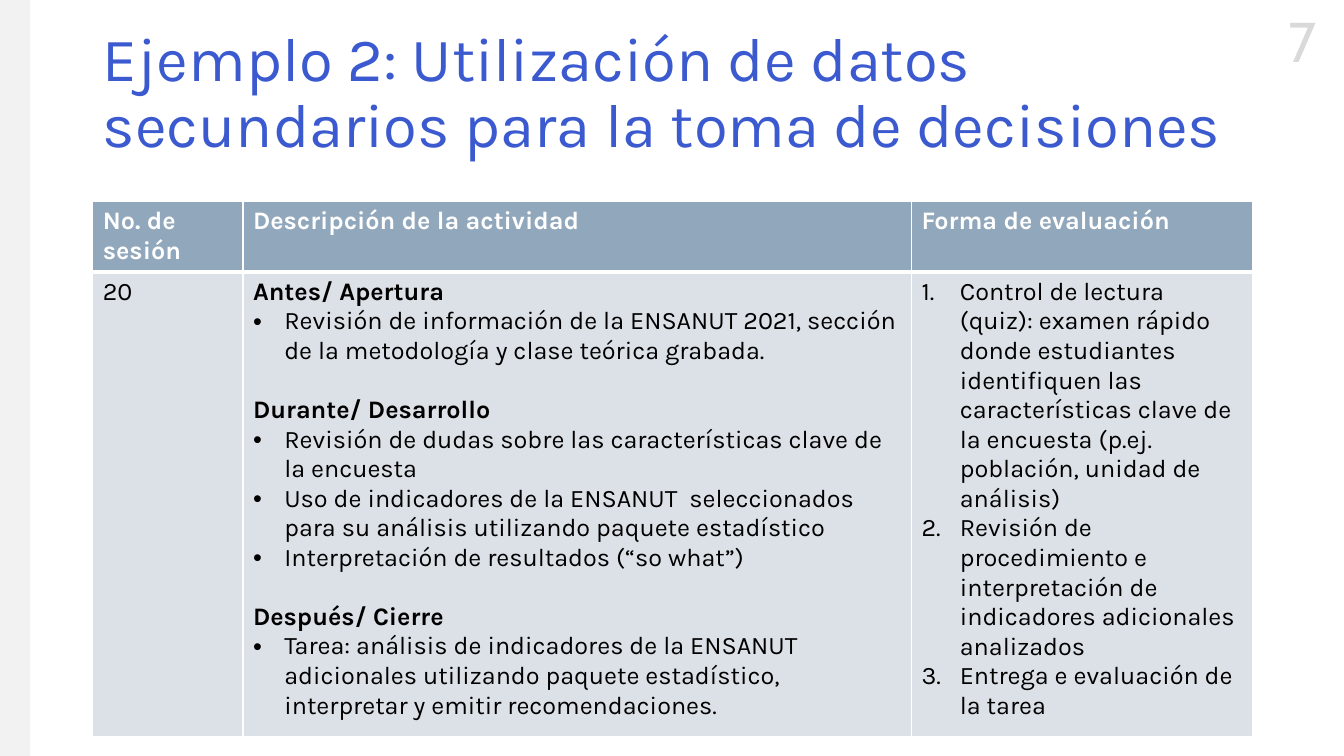
from lxml import etree
from pptx import Presentation
from pptx.dml.color import RGBColor
from pptx.enum import shapes, text
from pptx.oxml import ns
from pptx.util import Inches, Pt

BLUE = RGBColor(0x3C, 0x5A, 0xCF)
SLATE = RGBColor(0x91, 0xA7, 0xBC)
PALE = RGBColor(0xDC, 0xE1, 0xE7)
WHITE = RGBColor(0xFF, 0xFF, 0xFF)
BLACK = RGBColor(0, 0, 0)
STRIP_GRAY = RGBColor(0xF2, 0xF2, 0xF2)
NUMBER_GRAY = RGBColor(0xD9, 0xD9, 0xD9)

COLUMN_WIDTHS = (1.49, 6.63, 3.38)
ROW_HEIGHTS = (0.69, 4.61)
HEADINGS = ("No. de sesión", "Descripción de la actividad", "Forma de evaluación")
SESSION = "20"
STAGES = (
    ("Antes/ Apertura", (
        "Revisión de información de la ENSANUT 2021, sección de la metodología "
        "y clase teórica grabada.",
    )),
    ("Durante/ Desarrollo", (
        "Revisión de dudas sobre las características clave de la encuesta",
        "Uso de indicadores de la ENSANUT  seleccionados para su análisis "
        "utilizando paquete estadístico",
        "Interpretación de resultados (“so what”)",
    )),
    ("Después/ Cierre", (
        "Tarea: análisis de indicadores de la ENSANUT adicionales utilizando "
        "paquete estadístico, interpretar y emitir recomendaciones.",
    )),
)
EVALUATIONS = (
    "Control de lectura (quiz): examen rápido donde estudiantes identifiquen las "
    "características clave de la encuesta (p.ej. población, unidad de análisis)",
    "Revisión de procedimiento e interpretación de indicadores adicionales analizados",
    "Entrega e evaluación de la tarea",
)


def write(frame, words, size=18, font="Karla", color=BLACK, bold=False,
          before=0, align=None, spacing=None, marker=None, indent=0):
    """Add a paragraph, using the frame's first one while it is empty."""
    para = frame.paragraphs[0]
    if para.runs:
        para = frame.add_paragraph()
    if marker:
        mark_list_item(para, marker, indent)
    if before:
        para.space_before = Pt(before)
    if align is not None:
        para.alignment = align
    if spacing:
        para.line_spacing = spacing
    span = para.add_run()
    span.text = words
    span.font.size = Pt(size)
    span.font.name = font
    span.font.bold = bold
    span.font.color.rgb = color


def mark_list_item(para, marker, indent):
    """Give a hanging indent with a bullet character or, for "1.", a number."""
    properties = para._p.get_or_add_pPr()
    properties.set("marL", str(Inches(indent)))
    properties.set("indent", str(-Inches(indent)))
    if marker == "1.":
        etree.SubElement(properties, ns.qn("a:buAutoNum"), type="arabicPeriod")
    else:
        etree.SubElement(properties, ns.qn("a:buFont"), typeface="Arial")
        etree.SubElement(properties, ns.qn("a:buChar"), char=marker)


def style_cell(cell, color, top, bottom):
    """Set white borders, with top and bottom widths in points, and the fill."""
    properties = cell._tc.get_or_add_tcPr()
    for side, width in (("L", 1), ("R", 1), ("T", top), ("B", bottom)):
        line = etree.SubElement(properties, ns.qn(f"a:ln{side}"), w=str(Pt(width)))
        fill = etree.SubElement(line, ns.qn("a:solidFill"))
        etree.SubElement(fill, ns.qn("a:srgbClr"), val=str(WHITE))
    cell.fill.solid()
    cell.fill.fore_color.rgb = color


def add_strip(page, height):
    strip = page.shapes.add_shape(
        shapes.MSO_SHAPE.RECTANGLE, 0, 0, Inches(0.3), height)
    strip.shadow.inherit = False
    strip.fill.solid()
    strip.fill.fore_color.rgb = STRIP_GRAY
    strip.line.fill.background()


def add_page_number(page, number):
    box = page.shapes.add_textbox(
        Inches(12.54), Inches(0.02), Inches(0.75), Inches(0.77))
    box.text_frame.word_wrap = False
    write(box.text_frame, number, size=40, font="Cabin", color=NUMBER_GRAY,
          align=text.PP_ALIGN.CENTER)


def set_title(page, words):
    title = page.shapes.title
    title.left, title.top = Inches(0.92), Inches(0.55)
    title.width, title.height = Inches(11.5), Inches(1.45)
    frame = title.text_frame
    frame.word_wrap = True
    frame.auto_size = text.MSO_AUTO_SIZE.NONE
    frame.vertical_anchor = text.MSO_ANCHOR.MIDDLE
    frame.margin_bottom = Inches(0.72)
    write(frame, words, size=44, color=BLUE, spacing=0.9,
          align=text.PP_ALIGN.LEFT)


def add_activity_table(page):
    table = page.shapes.add_table(
        len(ROW_HEIGHTS), len(COLUMN_WIDTHS), Inches(0.92), Inches(2),
        Inches(sum(COLUMN_WIDTHS)), Inches(sum(ROW_HEIGHTS))).table
    for column, width in zip(table.columns, COLUMN_WIDTHS):
        column.width = Inches(width)
    for row, height in zip(table.rows, ROW_HEIGHTS):
        row.height = Inches(height)
    for index, heading in enumerate(HEADINGS):
        style_cell(table.cell(0, index), SLATE, top=1, bottom=3)
        style_cell(table.cell(1, index), PALE, top=3, bottom=1)
        write(table.cell(0, index).text_frame, heading, color=WHITE, bold=True)

    session, activities, evaluations = (cell.text_frame for cell in table.rows[1].cells)
    write(session, SESSION)
    for index, (stage, tasks) in enumerate(STAGES):
        write(activities, stage, bold=True, before=21 if index else 0)
        for task in tasks:
            write(activities, task, marker="•", indent=0.31)
    for evaluation in EVALUATIONS:
        write(evaluations, evaluation, marker="1.", indent=0.38)


def main():
    deck = Presentation()
    deck.slide_width, deck.slide_height = Inches(13.33), Inches(7.5)
    page = deck.slides.add_slide(deck.slide_layouts[5])
    add_page_number(page, "7")
    add_strip(page, deck.slide_height)
    add_activity_table(page)
    set_title(page, "Ejemplo 2: Utilización de datos secundarios para la toma de decisiones")
    deck.save("out.pptx")


if __name__ == "__main__":
    main()
